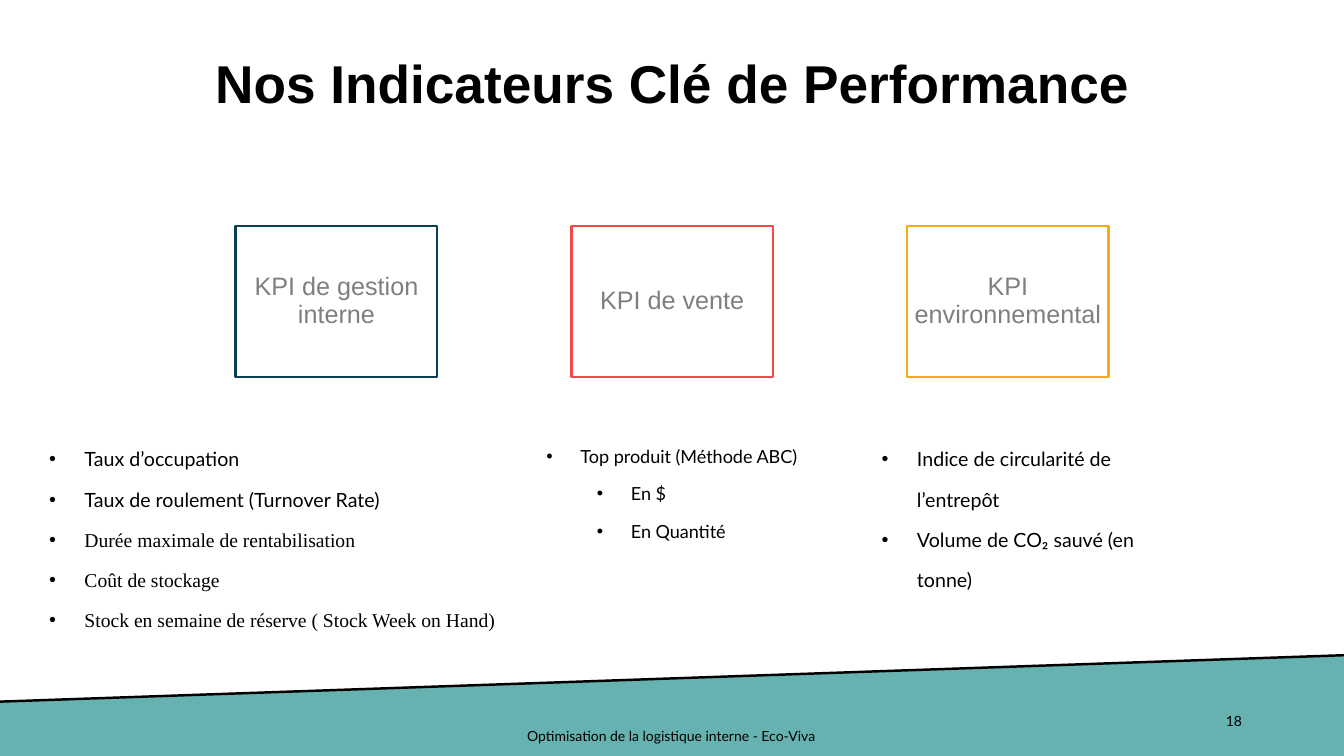
"""Build the key performance indicator slide."""
from lxml import etree
from pptx import Presentation
from pptx.dml.color import RGBColor
from pptx.enum.shapes import MSO_CONNECTOR, MSO_SHAPE
from pptx.enum.text import MSO_ANCHOR, PP_ALIGN
from pptx.oxml.ns import qn
from pptx.util import Cm, Pt

RECT, LINE = MSO_SHAPE.RECTANGLE, MSO_CONNECTOR.STRAIGHT
MID, TOP = MSO_ANCHOR.MIDDLE, MSO_ANCHOR.TOP
LEFT, MIDDLE, RIGHT = PP_ALIGN.LEFT, PP_ALIGN.CENTER, PP_ALIGN.RIGHT

THEME = {
    "ink": "000000", "label": "7F7F7F", "band": "66B2B0",
    "head": "Arial", "body": "Lato", "serif": "Times New Roman",
    "title": 38, "card": 18, "list": 14, "small": 12.9, "foot": 10, "line": 1.75,
}
TITLE = "Nos Indicateurs Clé de Performance"
FOOTER = "Optimisation de la logistique interne - Eco-Viva"
NUMBER = "18"
CARDS = [
    ("KPI de gestion interne", "0A4054", 0.25),
    ("KPI de vente", "F2494C", 0),
    ("KPI environnemental", "F9AA19", 0),
]
LISTS = [
    ((0.61, 12.5, 6.93), "list", 0.89, [
        ("Taux d’occupation", 0, "body"),
        ("Taux de roulement (Turnover Rate)", 0, "body"),
        ("Durée maximale de rentabilisation", 0, "serif"),
        ("Coût de stockage", 0, "serif"),
        ("Stock en semaine de réserve ( Stock Week on Hand)", 0, "serif"),
    ]),
    ((13.11, 7.62, 4.45), "small", 0.86, [
        ("Top produit (Méthode ABC)", 0, "body"),
        ("En $", 1, "body"),
        ("En Quantité", 1, "body"),
    ]),
    ((21.59, 8.69, 4.45), "list", 0.89, [
        ("Indice de circularité de l’entrepôt", 0, "body"),
        ("Volume de CO₂ sauvé (en tonne)", 0, "body"),
    ]),
]
WIDTH, HEIGHT = 33.87, 19.05
SLOPE = [(0, 17.68), (WIDTH, 16.51)]
CARD_X, CARD_Y, CARD_W, CARD_H, STEP = 5.94, 5.69, 5.08, 3.81, 8.46
LIST_Y, INDENT = 10.72, 1.27


def color(name):
    return RGBColor.from_string(THEME.get(name, name))


def setup(frame, anchor, pads=(0.25, 0.13, 0.25, 0.13)):
    frame.word_wrap = True
    frame.vertical_anchor = anchor
    sides = [Cm(pad) for pad in pads]
    frame.margin_left, frame.margin_top, frame.margin_right, frame.margin_bottom = sides


def style(para, face, size, ink="ink", align=LEFT, space=1.0, bold=False):
    para.alignment = align
    para.line_spacing = space
    for run in para.runs:
        run.font.name = THEME[face]
        run.font.size = Pt(THEME[size])
        run.font.bold = bold
        run.font.color.rgb = color(ink)


def add_text(slide, area, text, anchor, pads, *look, **more):
    box = slide.shapes.add_textbox(*map(Cm, area))
    setup(box.text_frame, anchor, pads)
    box.text_frame.text = text
    style(box.text_frame.paragraphs[0], *look, **more)


def add_band(slide):
    points = [(Cm(x), Cm(y)) for x, y in SLOPE + [(WIDTH, HEIGHT), (0, HEIGHT)]]
    pen = slide.shapes.build_freeform(*points[0])
    pen.add_line_segments(points[1:], close=True)
    band = pen.convert_to_shape()
    band.shadow.inherit = False
    band.fill.solid()
    band.fill.fore_color.rgb = color("band")
    band.line.fill.background()
    edge = slide.shapes.add_connector(LINE, *points[1], *points[0])
    edge.line.color.rgb = color("ink")
    edge.line.width = Pt(THEME["line"])
    etree.SubElement(edge.element.spPr, qn("a:effectLst"))


def add_card(slide, index, text, tint, pad):
    area = (CARD_X + index * STEP, CARD_Y, CARD_W, CARD_H)
    card = slide.shapes.add_shape(RECT, *map(Cm, area))
    card.shadow.inherit = False
    card.fill.background()
    card.line.color.rgb = color(tint)
    card.line.width = Pt(THEME["line"])
    setup(card.text_frame, MID, (pad, pad / 2, pad, pad / 2))
    card.text_frame.text = text
    style(card.text_frame.paragraphs[0], "head", "card", "label", MIDDLE, 0.9)


def add_bullet(para, level, hang):
    props = para._p.get_or_add_pPr()
    props.set("marL", str(Cm(INDENT * (level + 1))))
    props.set("indent", str(-Cm(hang)))
    tint = etree.SubElement(props, qn("a:buClr"))
    etree.SubElement(tint, qn("a:srgbClr"), val=THEME["ink"])
    etree.SubElement(props, qn("a:buFont"), typeface=THEME["head"])
    etree.SubElement(props, qn("a:buChar"), char="•")


def add_list(slide, place, size, hang, items):
    left, width, height = place
    box = slide.shapes.add_textbox(*map(Cm, (left, LIST_Y, width, height)))
    frame = box.text_frame
    setup(frame, TOP)
    frame.text = "\n".join(text for text, _, _ in items)
    for para, (_, level, face) in zip(frame.paragraphs, items):
        para.level = level
        add_bullet(para, level, hang)
        style(para, face, size, space=1.71)


def main():
    deck = Presentation()
    deck.slide_width, deck.slide_height = Cm(WIDTH), Cm(HEIGHT)
    slide = deck.slides.add_slide(deck.slide_layouts[6])
    add_band(slide)
    add_text(slide, (2.34, 1.02, 29.21, 3.68), TITLE, MID, (0.25, 0.13, 0.25, 1.52),
             "head", "title", align=MIDDLE, space=0.9, bold=True)
    add_text(slide, (23.93, 17.65, 7.62, 1.02), NUMBER, MID, (0.25, 0.13, 0.25, 0.13),
             "body", "foot", align=RIGHT)
    for index, card in enumerate(CARDS):
        add_card(slide, index, *card)
    for group in LISTS:
        add_list(slide, *group)
    add_text(slide, (12.75, 18.11, 8.33, 0.94), FOOTER, TOP, (0.25, 0.25, 0.25, 0.25),
             "body", "foot", align=MIDDLE)
    deck.save("out.pptx")


if __name__ == "__main__":
    main()
